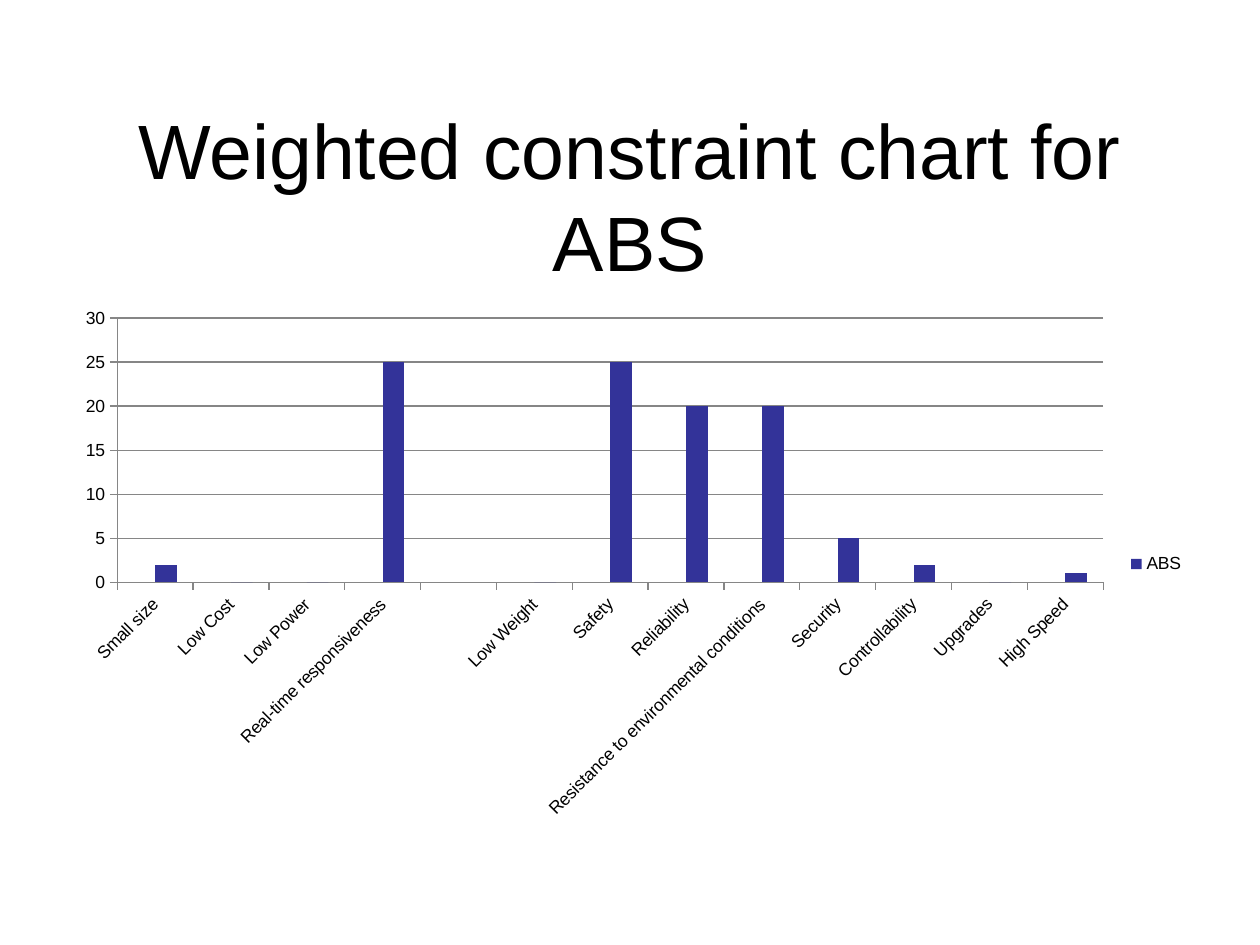
from dataclasses import dataclass
from typing import Optional

from lxml import etree
from pptx import Presentation
from pptx.chart.data import CategoryChartData
from pptx.dml.color import RGBColor
from pptx.enum.chart import XL_CHART_TYPE, XL_LEGEND_POSITION, XL_TICK_MARK
from pptx.enum.text import MSO_ANCHOR, PP_ALIGN
from pptx.oxml import parse_xml
from pptx.oxml.ns import nsdecls
from pptx.util import Pt

COLUMN = XL_CHART_TYPE.COLUMN_CLUSTERED
RIGHT = XL_LEGEND_POSITION.RIGHT
OUTSIDE = XL_TICK_MARK.OUTSIDE
MIDDLE = MSO_ANCHOR.MIDDLE
CENTER = PP_ALIGN.CENTER
FONT = "Arial"
BLACK = "000000"
GREY = "868686"
CHART_WIDTH, CHART_HEIGHT = 648, 303.84
PLOT_LAYOUT = {
    "x": 31 / CHART_WIDTH,
    "y": 11.4 / CHART_HEIGHT,
    "w": 563.4 / CHART_WIDTH,
    "h": 151 / CHART_HEIGHT,
}


@dataclass
class Series:
    name: str
    values: list[Optional[int]]
    color: str


CATEGORIES = [
    "Small size", "Low Cost", "Low Power", "Real-time responsiveness", "",
    "Low Weight", "Safety", "Reliability",
    "Resistance to environmental conditions", "Security",
    "Controllability", "Upgrades", "High Speed",
]
SERIES = [
    Series("Series 1", [None] * len(CATEGORIES), "BBE0E3"),
    Series("ABS", [2, 0, 0, 25, None, 0, 25, 20, 20, 5, 2, 0, 1], "333399"),
]


def rgb(color: str) -> RGBColor:
    return RGBColor.from_string(color)


def style_font(font, size: float) -> None:
    font.name, font.size = FONT, Pt(size)
    font.color.rgb = rgb(BLACK)


def add_title(s, text: str) -> None:
    tf = s.shapes.add_textbox(Pt(36), Pt(66.24), Pt(648), Pt(90)).text_frame
    tf.word_wrap = True
    tf.vertical_anchor = MIDDLE
    p = tf.paragraphs[0]
    p.alignment = CENTER
    r = p.add_run()
    r.text = text
    style_font(r.font, 44)


def set_plot_layout(chart) -> None:
    """Fix the inner plot area, as fractions of the chart frame."""
    plot_area = chart.plots[0]._element.getparent()
    for old in plot_area.xpath("c:layout"):
        plot_area.remove(old)
    layout = parse_xml(
        f'<c:layout {nsdecls("c")}><c:manualLayout><c:layoutTarget val="inner"/>'
        '<c:xMode val="edge"/><c:yMode val="edge"/></c:manualLayout></c:layout>'
    )
    for key, value in PLOT_LAYOUT.items():
        etree.SubElement(layout[0], layout.tag.replace("layout", key)).set("val", str(value))
    plot_area.insert(0, layout)


def hide_legend_entry(legend, index: int) -> None:
    entry = parse_xml(
        f'<c:legendEntry {nsdecls("c")}><c:idx val="{index}"/>'
        '<c:delete val="1"/></c:legendEntry>'
    )
    legend._element.xpath("c:legendPos")[0].addnext(entry)


def style_axis(axis) -> None:
    axis.major_tick_mark = OUTSIDE
    axis.format.line.color.rgb = rgb(GREY)
    style_font(axis.tick_labels.font, 10)


def add_constraint_chart(s) -> None:
    data = CategoryChartData()
    data.categories = CATEGORIES
    for series in SERIES:
        data.add_series(series.name, series.values)
    chart = s.shapes.add_chart(
        COLUMN, Pt(36), Pt(170.4), Pt(CHART_WIDTH), Pt(CHART_HEIGHT), data
    ).chart
    style_font(chart.font, 10)
    chart.has_title = False
    chart.has_legend = True
    chart.legend.position = RIGHT
    chart.legend.include_in_layout = False
    style_font(chart.legend.font, 10)
    hide_legend_entry(chart.legend, 0)

    plot = chart.plots[0]
    plot.gap_width = 150
    plot.overlap = 0
    plot.vary_by_categories = False
    for drawn, series in zip(plot.series, SERIES):
        drawn.format.fill.solid()
        drawn.format.fill.fore_color.rgb = rgb(series.color)

    category_axis, value_axis = chart.category_axis, chart.value_axis
    style_axis(category_axis)
    style_axis(value_axis)
    category_axis._element.xpath("c:txPr/a:bodyPr")[0].set("rot", "-2700000")
    value_axis.minimum_scale, value_axis.maximum_scale = 0, 30
    value_axis.major_unit = 5
    value_axis.has_major_gridlines = True
    value_axis.major_gridlines.format.line.color.rgb = rgb(GREY)
    set_plot_layout(chart)


def main() -> None:
    prs = Presentation()
    prs.slide_width, prs.slide_height = Pt(720), Pt(540)
    s = prs.slides.add_slide(prs.slide_layouts[6])
    add_title(s, "Weighted constraint chart for ABS")
    add_constraint_chart(s)
    prs.save("out.pptx")


if __name__ == "__main__":
    main()
